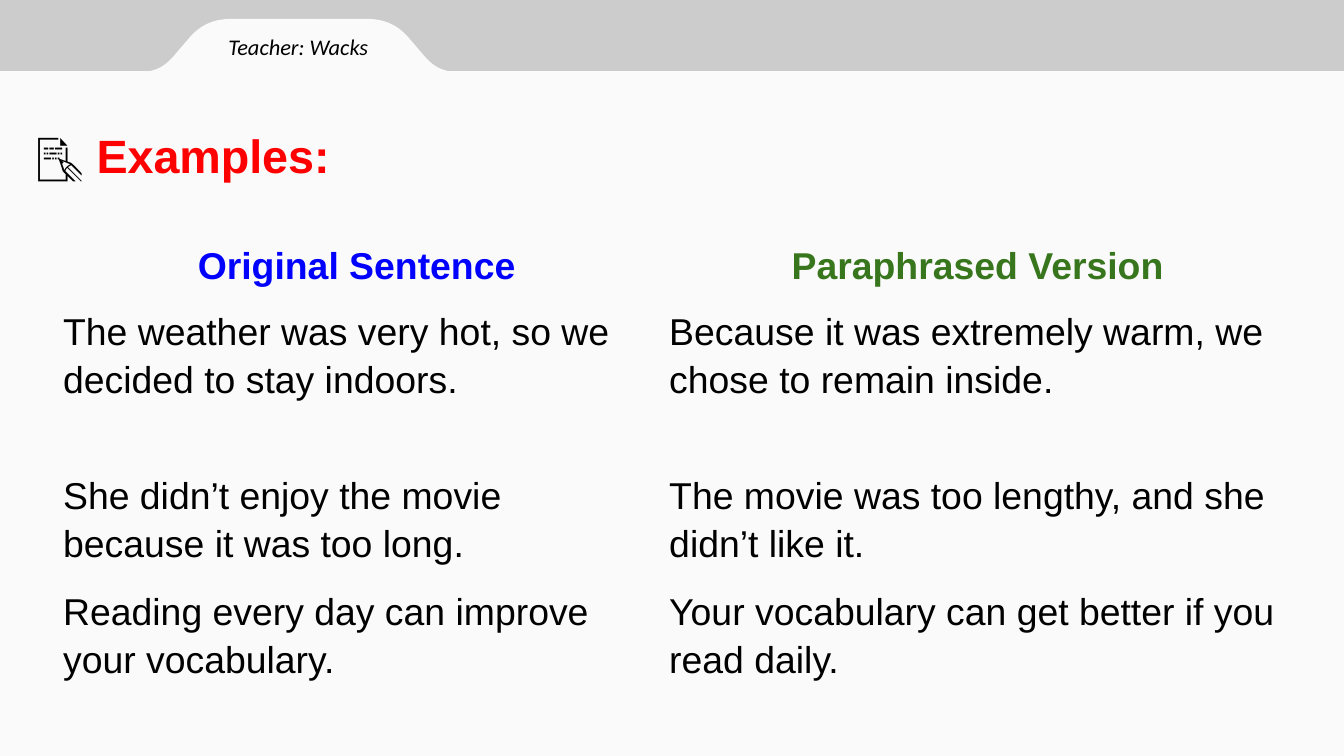
from lxml import etree
from pptx import Presentation
from pptx.dml.color import RGBColor
from pptx.enum.shapes import MSO_SHAPE
from pptx.enum.text import MSO_ANCHOR, MSO_AUTO_SIZE, PP_ALIGN
from pptx.oxml.ns import qn
from pptx.util import Inches, Pt

LEFT, MID = PP_ALIGN.LEFT, PP_ALIGN.CENTER
CENTER = MSO_ANCHOR.MIDDLE
ROUND = MSO_SHAPE.ROUNDED_RECTANGLE
FIXED = MSO_AUTO_SIZE.NONE

WIDE = 10
HIGH = WIDE * 9 / 16
TOP = 0.53  # top edge of the page
GREY, PAGE, BLACK = "CCCCCC", "FAFAFA", "000000"
RED, BLUE, GREEN = "FF0000", "0000FF", "38761D"

COLS = [4.51, 4.73]
ROWS = [0.49, 1.22, 0.86, 0.86]
HEADS = [("Original Sentence", BLUE), ("Paraphrased Version", GREEN)]
PAIRS = [
    ("The weather was very hot, so we decided to stay indoors.",
     "Because it was extremely warm, we chose to remain inside."),
    ("She didn’t enjoy the movie because it was too long.",
     "The movie was too lengthy, and she didn’t like it."),
    ("Reading every day can improve your vocabulary.",
     "Your vocabulary can get better if you read daily."),
]


def color(code):
    return RGBColor.from_string(code)


def paint(shape, code):
    shape.fill.solid()
    shape.fill.fore_color.rgb = color(code)
    shape.line.fill.background()
    shape.shadow.inherit = False


def write(frame, runs, size, align=LEFT, font="Arial", bold=False,
          slant=False, gap=0):
    par = frame.paragraphs[0]
    par.alignment = align
    par.line_spacing = 1.15
    par.space_before = par.space_after = Pt(gap)
    for text, code in runs:
        run = par.add_run()
        run.text = text
        run.font.name = font
        run.font.size = Pt(size)
        run.font.bold = bold
        run.font.italic = slant
        run.font.color.rgb = color(code)


def place(holder, box, inset):
    holder.left, holder.top, holder.width, holder.height = map(Inches, box)
    frame = holder.text_frame
    frame.word_wrap = True
    frame.auto_size = FIXED
    frame.vertical_anchor = CENTER
    frame.margin_left = frame.margin_right = Inches(inset)
    frame.margin_top = frame.margin_bottom = Inches(inset)
    return frame


def curve(a, b, c, d, steps=12):
    """Points along a cubic curve."""
    points = []
    for i in range(steps + 1):
        t = i / steps
        u = 1 - t
        points.append(tuple(
            u**3 * p + 3 * u * u * t * q + 3 * u * t * t * r + t**3 * s
            for p, q, r, s in zip(a, b, c, d)))
    return points


def add_page(slide):
    page = slide.shapes.add_shape(
        ROUND, 0, Inches(TOP), Inches(WIDE), Inches(HIGH - TOP))
    page.adjustments[0] = 0
    paint(page, PAGE)


def add_tab(slide):
    # The right side mirrors the left
    foot = curve((1, 0.54), (1.15, 0.54), (1.22, 0.5), (1.29, 0.42))
    head = curve((1.41, 0.28), (1.48, 0.2), (1.57, 0.14), (1.73, 0.14))
    side = foot + head
    points = side + [(4.45 - x, y) for x, y in reversed(side)]
    # The builder keeps whole units only, so work in EMU
    dots = [(Inches(x), Inches(y)) for x, y in points]
    build = slide.shapes.build_freeform(*dots[0])
    build.add_line_segments(dots[1:], close=True)
    paint(build.convert_to_shape(), PAGE)


def clear_cell(cell):
    cell.fill.background()
    props = cell._tc.get_or_add_tcPr()
    for i, side in enumerate(("a:lnL", "a:lnR", "a:lnT", "a:lnB")):
        line = etree.Element(qn(side))
        etree.SubElement(line, qn("a:noFill"))
        props.insert(i, line)


def add_grid(slide):
    grid = slide.shapes.add_table(
        len(ROWS), len(COLS), Inches(0.4), Inches(1.71),
        Inches(sum(COLS)), Inches(sum(ROWS))).table
    for col, width in zip(grid.columns, COLS):
        col.width = Inches(width)
    for row, height in zip(grid.rows, ROWS):
        row.height = Inches(height)
    lines = [HEADS] + [[(text, BLACK) for text in pair] for pair in PAIRS]
    for r, line in enumerate(lines):
        for c, run in enumerate(line):
            cell = grid.cell(r, c)
            clear_cell(cell)
            cell.margin_left = cell.margin_right = Inches(0.07)
            cell.margin_top = cell.margin_bottom = Inches(0.07)
            write(cell.text_frame, [run], 20, MID if r == 0 else LEFT,
                  bold=r == 0)


def main():
    deck = Presentation()
    deck.slide_width, deck.slide_height = Inches(WIDE), Inches(HIGH)
    slide = deck.slides.add_slide(deck.slide_layouts[0])
    title, label = slide.placeholders

    # Backdrop: grey band, page and folder tab
    slide.background.fill.solid()
    slide.background.fill.fore_color.rgb = color(GREY)
    add_page(slide)
    add_tab(slide)

    # Bring the placeholders in front of the backdrop
    tree = slide.shapes._spTree
    for holder in (label, title):
        tree.append(holder._element)

    # Tab label and heading
    frame = place(label, (1.4, 0.23, 1.64, 0.2), 0)
    write(frame, [("Teacher: Wacks", BLACK)], 12, MID, "Calibri", slant=True)
    frame = place(title, (0.17, 0.77, 2.9, 0.7), 0.1)
    write(frame, [("📝 ", BLACK), ("Examples:", RED)], 25, bold=True, gap=12)

    # Sentence pairs
    add_grid(slide)
    deck.save("out.pptx")


if __name__ == "__main__":
    main()
